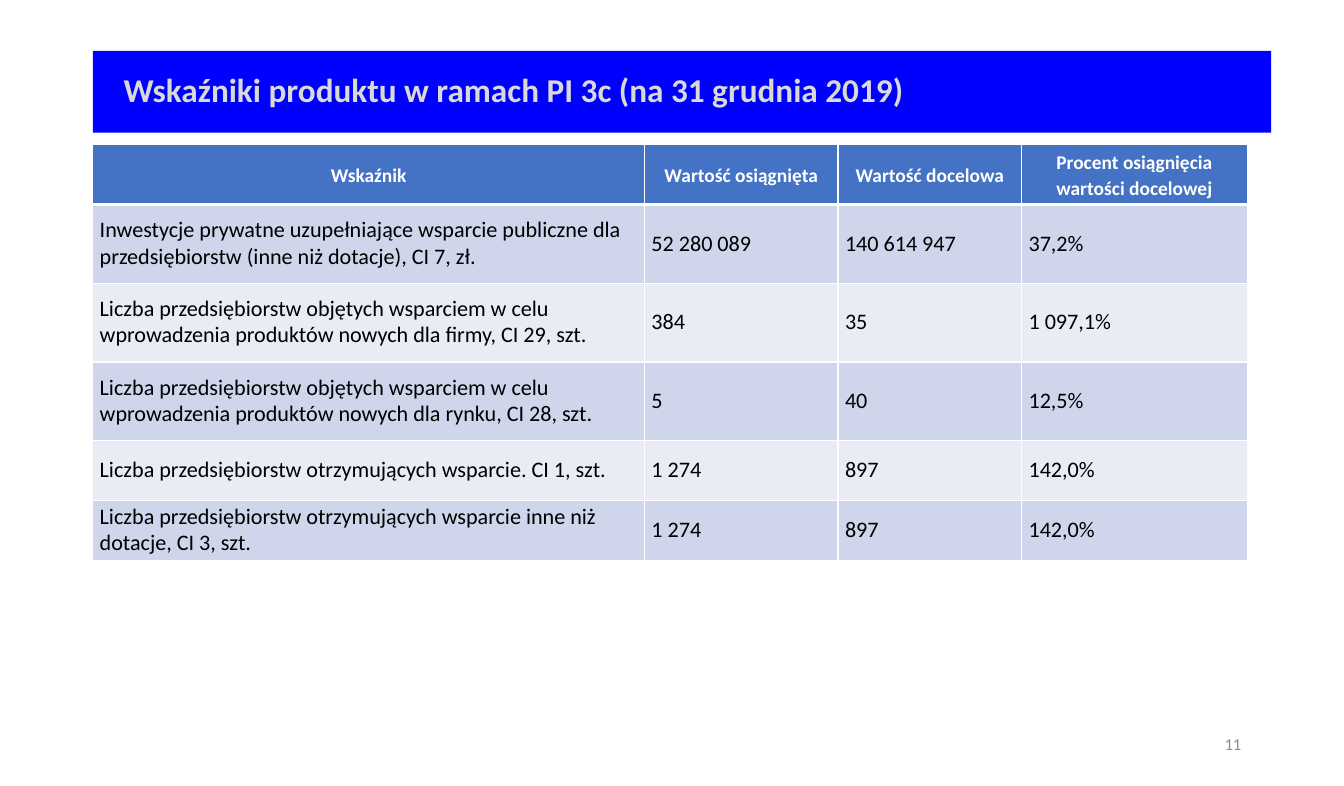
from lxml import etree
from pptx import Presentation, util as u
from pptx.dml.color import RGBColor
from pptx.enum import shapes, text
from pptx.oxml.ns import qn

theme = {
    "font": "Calibri",
    "banner": "0000FF", "title": "D9D9D9", "number": "8C8C8C",
    "head": "4472C4", "bands": ["E9EBF5", "CFD5EA"],
    "light": "FFFFFF", "dark": "000000",
    "title_pt": 24, "head_pt": 14, "body_pt": 16, "number_pt": 12, "line_pt": 19,
}

rows = [
    ["Wskaźnik", "Wartość osiągnięta", "Wartość docelowa", "Procent osiągnięcia wartości docelowej"],
    ["Inwestycje prywatne uzupełniające wsparcie publiczne dla przedsiębiorstw (inne niż dotacje), CI 7, zł.",
     "52 280 089", "140 614 947", "37,2%"],
    ["Liczba przedsiębiorstw objętych wsparciem w celu wprowadzenia produktów nowych dla firmy, CI 29, szt.",
     "384", "35", "1 097,1%"],
    ["Liczba przedsiębiorstw objętych wsparciem w celu wprowadzenia produktów nowych dla rynku, CI 28, szt.",
     "5", "40", "12,5%"],
    ["Liczba przedsiębiorstw otrzymujących wsparcie. CI 1, szt.", "1 274", "897", "142,0%"],
    ["Liczba przedsiębiorstw otrzymujących wsparcie inne niż dotacje, CI 3, szt.", "1 274", "897", "142,0%"],
]
widths = [5.53, 1.94, 1.84, 2.26]
heights = [0.6, 0.79, 0.79, 0.79, 0.6, 0.6]
left = 0.93


def write(frame, words, size, color, bold=False, align=text.PP_ALIGN.LEFT):
    frame.text = words
    frame.word_wrap = True
    frame.vertical_anchor = text.MSO_ANCHOR.MIDDLE
    para = frame.paragraphs[0]
    para.alignment = align
    font = para.runs[0].font
    font.name, font.size, font.bold = theme["font"], u.Pt(size), bold
    font.color.rgb = RGBColor.from_string(color)
    return para


def edge(cell, side, width):
    line = etree.SubElement(cell._tc.get_or_add_tcPr(), qn("a:ln" + side), w=str(u.Pt(width)))
    fill = etree.SubElement(line, qn("a:solidFill"))
    etree.SubElement(fill, qn("a:srgbClr"), val=theme["light"])


deck = Presentation()
deck.slide_width, deck.slide_height = u.Inches(13.47), u.Inches(7.88)
slide = deck.slides.add_slide(deck.slide_layouts[6])

banner = slide.shapes.add_shape(
    shapes.MSO_SHAPE.RECTANGLE, u.Inches(left), u.Inches(0.51), u.Inches(11.81), u.Inches(0.82))
banner.shadow.inherit = False
banner.fill.solid()
banner.fill.fore_color.rgb = RGBColor.from_string(theme["banner"])
banner.line.fill.background()
title = write(banner.text_frame, "Wskaźniki produktu w ramach PI 3c (na 31 grudnia 2019)",
              theme["title_pt"], theme["title"], True)
title.line_spacing = 0.9
props = title._p.get_or_add_pPr()
props.set("marL", str(u.Inches(0.2)))
props.set("indent", str(u.Inches(0.01)))

number = slide.shapes.add_textbox(u.Inches(9.75), u.Inches(7.3), u.Inches(2.79), u.Inches(0.31))
write(number.text_frame, "11", theme["number_pt"], theme["number"], align=text.PP_ALIGN.RIGHT)

table = slide.shapes.add_table(
    len(rows), len(widths), u.Inches(left), u.Inches(1.45),
    u.Inches(sum(widths)), u.Inches(sum(heights))).table
for col, width in zip(table.columns, widths):
    col.width = u.Inches(width)
for r, (row, height) in enumerate(zip(rows, heights)):
    table.rows[r].height = u.Inches(height)
    head = r == 0
    for c, words in enumerate(row):
        cell = table.cell(r, c)
        cell.margin_left = cell.margin_right = u.Inches(0.07)
        cell.margin_top = cell.margin_bottom = 0
        cell.vertical_anchor = text.MSO_ANCHOR.MIDDLE
        para = write(cell.text_frame, words,
                     theme["head_pt"] if head else theme["body_pt"],
                     theme["light"] if head else theme["dark"], head,
                     text.PP_ALIGN.CENTER if head else text.PP_ALIGN.LEFT)
        para.line_spacing = u.Pt(theme["line_pt"])
        for side in "LRTB":
            thick = (side == "B" and head) or (side == "T" and r == 1)
            edge(cell, side, 3 if thick else 1)
        cell.fill.solid()
        cell.fill.fore_color.rgb = RGBColor.from_string(
            theme["head"] if head else theme["bands"][r % 2])

deck.save("out.pptx")
